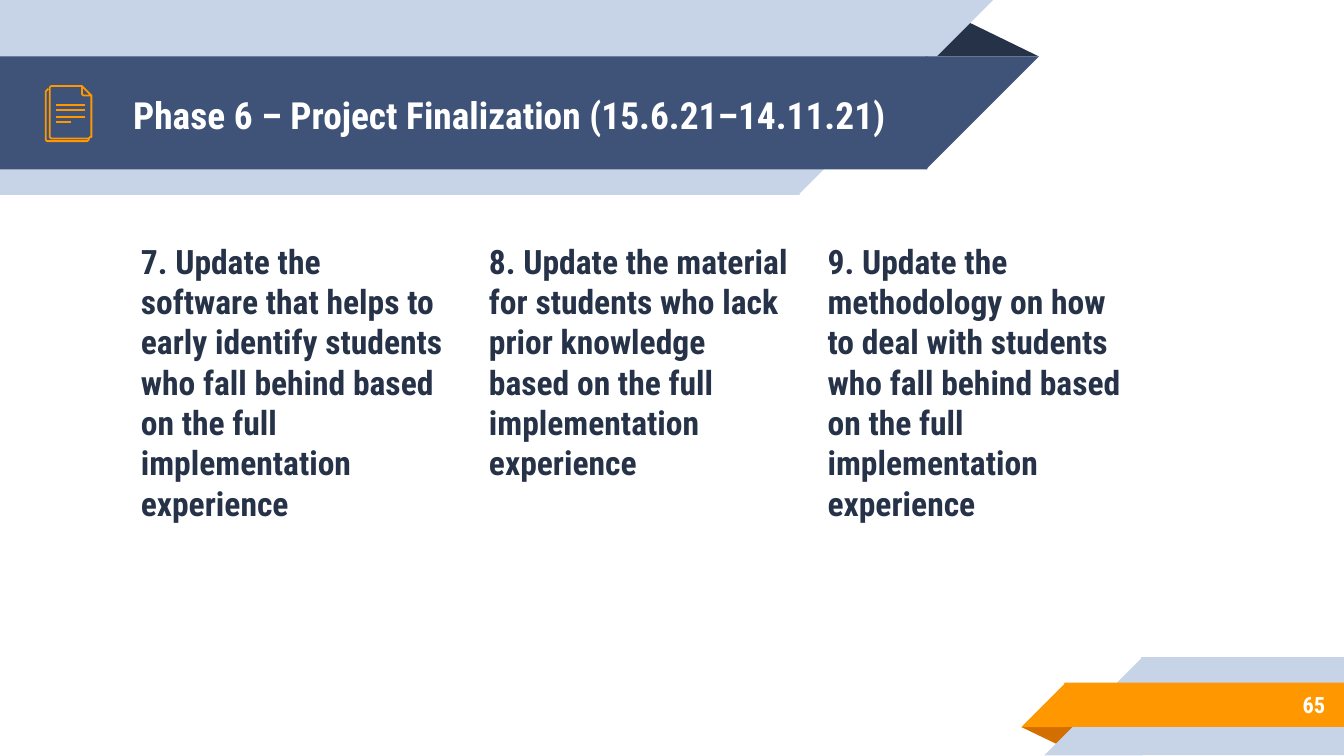
from dataclasses import dataclass

from lxml import etree
from pptx import Presentation
from pptx.dml.color import RGBColor
from pptx.enum.shapes import MSO_CONNECTOR, MSO_SHAPE
from pptx.enum.text import MSO_ANCHOR, MSO_AUTO_SIZE, PP_ALIGN
from pptx.oxml.ns import qn
from pptx.util import Inches, Pt

RECTANGLE = MSO_SHAPE.RECTANGLE
RIGHT_TRIANGLE = MSO_SHAPE.RIGHT_TRIANGLE
TRIANGLE = MSO_SHAPE.ISOSCELES_TRIANGLE
STRAIGHT = MSO_CONNECTOR.STRAIGHT
TOP, MIDDLE = MSO_ANCHOR.TOP, MSO_ANCHOR.MIDDLE
LEFT, RIGHT = PP_ALIGN.LEFT, PP_ALIGN.RIGHT
NO_AUTO_SIZE = MSO_AUTO_SIZE.NONE
TITLE_ONLY = 5


@dataclass(frozen=True)
class Theme:
    font: str = "Roboto Condensed"
    white: str = "FFFFFF"
    navy: str = "263248"
    blue: str = "3F5378"
    pale: str = "C7D3E6"
    orange: str = "FF9800"
    dark_orange: str = "D26F00"
    title_size: int = 20
    body_size: int = 18
    number_size: int = 12
    icon_line: float = 0.96


THEME = Theme()
SLIDE_WIDTH = 10
SLIDE_HEIGHT = SLIDE_WIDTH * 9 / 16
SEAM = 0.01

TASKS = {
    0.95: "7. Update the software that helps to early identify students who fall behind "
          "based on the full implementation experience",
    3.54: "8. Update the material for students who lack prior knowledge "
          "based on the full implementation experience",
    6.06: "9. Update the methodology on how to deal with students who fall behind "
          "based on the full implementation experience",
}

BACK_PAGE = [(0.66, 1.03), (0.66, 1.04), (0.65, 1.05), (0.64, 1.05), (0.36, 1.05),
             (0.35, 1.05), (0.34, 1.04), (0.34, 1.03), (0.34, 0.68), (0.35, 0.67),
             (0.36, 0.66)]
FRONT_PAGE = [(0.68, 0.71), (0.68, 1.01), (0.68, 1.02), (0.67, 1.02), (0.66, 1.03),
              (0.38, 1.03), (0.37, 1.02), (0.37, 1.01), (0.37, 0.66), (0.37, 0.65),
              (0.38, 0.64), (0.61, 0.64)]
FOLDED_CORNER = [(0.61, 0.7), (0.61, 0.64), (0.68, 0.71), (0.63, 0.71), (0.62, 0.71)]
TEXT_LINES = [(0.78, 0.63), (0.82, 0.63), (0.87, 0.63), (0.91, 0.53)]


def color(value):
    return RGBColor.from_string(value)


def add_filled_shape(slide, kind, box, fill, rotation=0):
    shape = slide.shapes.add_shape(kind, *map(Inches, box))
    shape.shadow.inherit = False
    shape.fill.solid()
    shape.fill.fore_color.rgb = color(fill)
    shape.line.fill.background()
    shape.rotation = rotation
    return shape


def add_fold(slide, box, fill, rotation=0):
    fold = add_filled_shape(slide, TRIANGLE, box, fill, rotation)
    fold.adjustments[0] = 0.324


def add_top_band(slide, top, width, height, fill):
    add_filled_shape(slide, RECTANGLE, (0, top, width + SEAM, height), fill)
    add_filled_shape(slide, RIGHT_TRIANGLE, (width, top, height, height), fill, 90)


def add_bottom_band(slide, left, top, height, fill):
    start = left - SEAM
    add_filled_shape(slide, RECTANGLE, (start, top, SLIDE_WIDTH - start, height), fill)
    add_filled_shape(slide, RIGHT_TRIANGLE, (left - height, top, height, height), fill, 270)


def write_text(shape, text, *, size, fill, anchor=TOP, align=LEFT, space_before=0):
    frame = shape.text_frame
    frame.word_wrap = True
    frame.auto_size = NO_AUTO_SIZE
    frame.vertical_anchor = anchor
    frame.margin_left = frame.margin_right = Inches(0.1)
    frame.margin_top = frame.margin_bottom = Inches(0.1)
    paragraph = frame.paragraphs[0]
    paragraph.alignment = align
    paragraph.space_before = Pt(space_before)
    run = paragraph.add_run()
    run.text = text
    run.font.name = THEME.font
    run.font.size = Pt(size)
    run.font.bold = True
    run.font.color.rgb = color(fill)


def add_title(slide, text):
    title = slide.shapes.title
    title.left, title.top, title.width, title.height = map(Inches, (0.89, 0.43, 6.02, 0.84))
    write_text(title, text, size=THEME.title_size, fill=THEME.white, anchor=MIDDLE)
    title.element.getparent().append(title.element)


def add_text_box(slide, box, text, **text_format):
    write_text(slide.shapes.add_textbox(*map(Inches, box)), text, **text_format)


def style_icon_line(shape):
    shape.line.color.rgb = color(THEME.orange)
    shape.line.width = Pt(THEME.icon_line)


def add_outline(slide, points, closed=False):
    start, *rest = [(Inches(x), Inches(y)) for x, y in points]
    builder = slide.shapes.build_freeform(*start)
    builder.add_line_segments(rest, close=closed)
    outline = builder.convert_to_shape()
    outline.shadow.inherit = False
    outline.fill.background()
    style_icon_line(outline)


def add_icon_rule(slide, left, right, y):
    rule = slide.shapes.add_connector(STRAIGHT, *map(Inches, (right, y, left, y)))
    style_icon_line(rule)
    etree.SubElement(rule.element.spPr, qn("a:effectLst"))


def add_document_icon(slide):
    add_outline(slide, BACK_PAGE)
    add_outline(slide, FRONT_PAGE)
    for y, right in TEXT_LINES:
        add_icon_rule(slide, 0.42, right, y)
    add_outline(slide, FOLDED_CORNER, closed=True)


def add_ribbons(slide):
    add_fold(slide, (6.88, 0.14, 0.85, 0.28), THEME.navy)
    add_top_band(slide, 0, 5.94, 1.45, THEME.pale)
    add_top_band(slide, 0.42, 6.89, 0.84, THEME.blue)
    add_fold(slide, (7.6, 5.41, 0.43, 0.14), THEME.dark_orange, 180)
    add_bottom_band(slide, 8.5, 4.89, 0.73, THEME.pale)
    add_bottom_band(slide, 7.93, 5.08, 0.33, THEME.orange)


def main():
    presentation = Presentation()
    presentation.slide_width = Inches(SLIDE_WIDTH)
    presentation.slide_height = Inches(SLIDE_HEIGHT)
    slide = presentation.slides.add_slide(presentation.slide_layouts[TITLE_ONLY])
    add_ribbons(slide)
    add_title(slide, "Phase 6 – Project Finalization (15.6.21–14.11.21)")
    for left, task in TASKS.items():
        add_text_box(slide, (left, 1.69, 2.46, 2.96), task,
                     size=THEME.body_size, fill=THEME.navy, space_before=6)
    add_text_box(slide, (8.33, 5.07, 1.63, 0.35), "65", size=THEME.number_size,
                 fill=THEME.white, anchor=MIDDLE, align=RIGHT)
    add_document_icon(slide)
    presentation.save("out.pptx")


if __name__ == "__main__":
    main()
